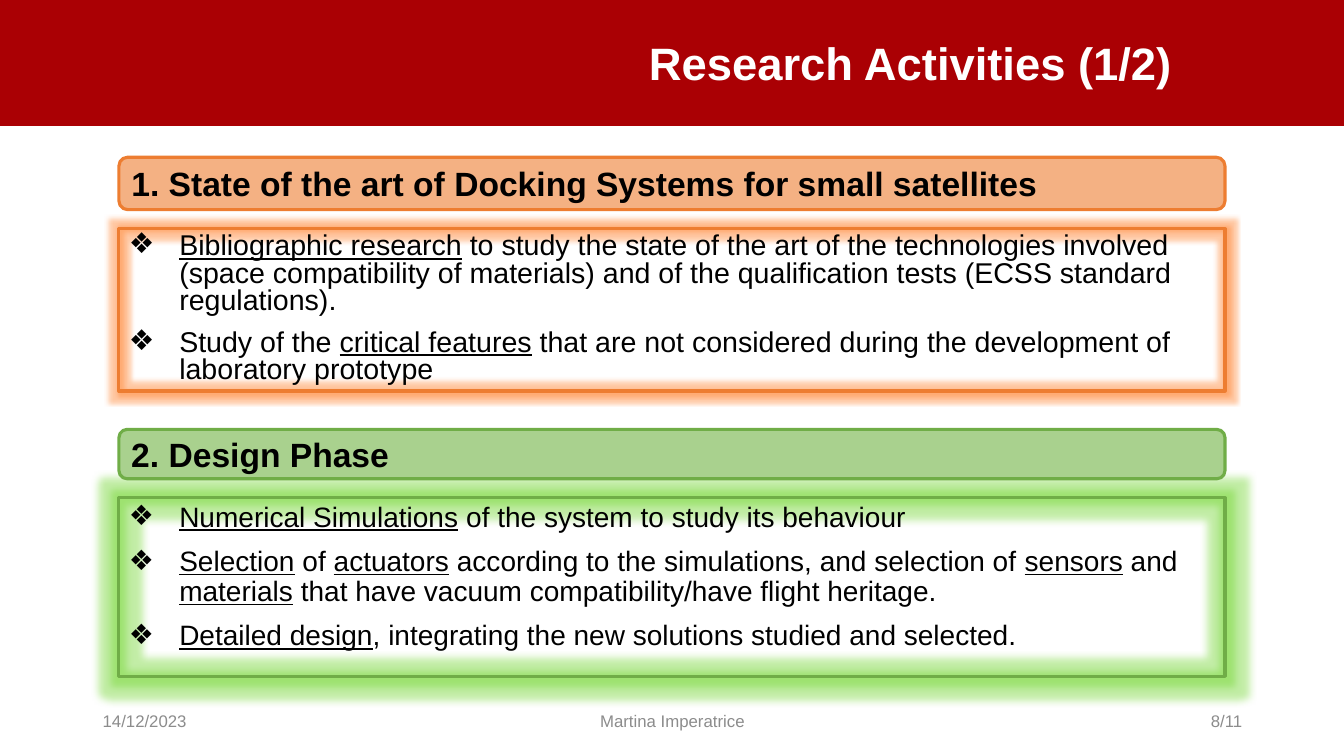
import pptx
import pptx.util
import pptx.dml.color
import pptx.enum.shapes
import pptx.enum.text
import pptx.oxml
import pptx.oxml.ns

Inches = pptx.util.Inches
Pt = pptx.util.Pt
SHAPE = pptx.enum.shapes.MSO_SHAPE
ALIGN = pptx.enum.text.PP_ALIGN
ANCHOR = pptx.enum.text.MSO_ANCHOR

LEFT, WIDTH = 1.18, 10.97
SECTIONS = [
    {
        "heading": "1. State of the art of Docking Systems for small satellites",
        "top": 1.56, "heading_height": 0.52, "body_height": 1.61,
        "fill": "F4B183", "accent": "ED7D31", "glow": 5, "size": 20.4, "spacing": 0.8,
        "bullets": [
            "_Bibliographic research_ to study the state of the art of the technologies involved "
            "(space compatibility of materials) and of the qualification tests "
            "(ECSS standard regulations).",
            "Study of the _critical features_ that are not considered during the development of "
            "laboratory prototype",
        ],
    },
    {
        "heading": "2. Design Phase",
        "top": 4.26, "heading_height": 0.49, "body_height": 1.77,
        "fill": "A9D18E", "accent": "70AD47", "glow": 11, "size": 20, "spacing": 0.9,
        "bullets": [
            "_Numerical Simulations_ of the system to study its behaviour",
            "_Selection_ of _actuators_ according to the simulations, and selection of _sensors_ "
            "and _materials_ that have vacuum compatibility/have flight heritage.",
            "_Detailed design_, integrating the new solutions studied and selected.",
        ],
    },
]
GAP = 0.19


def color(value):
    return pptx.dml.color.RGBColor.from_string(value)


def set_font(para, size, value, bold=False):
    para.font.name = "Arial"
    para.font.size = Pt(size)
    para.font.bold = bold
    para.font.color.rgb = color(value)


def add_box(slide, kind, box, fill=None, line=None):
    shape = slide.shapes.add_shape(kind, *map(Inches, box))
    shape.shadow.inherit = False
    if fill:
        shape.fill.solid()
        shape.fill.fore_color.rgb = color(fill)
    else:
        shape.fill.background()
    if line:
        shape.line.color.rgb = color(line)
        shape.line.width = Pt(2.25)
    else:
        shape.line.fill.background()
    return shape


def write_line(shape, text, size, value, align=ALIGN.LEFT, bold=False):
    frame = shape.text_frame
    frame.word_wrap = True
    frame.vertical_anchor = ANCHOR.MIDDLE
    para = frame.paragraphs[0]
    para.text = text
    para.alignment = align
    set_font(para, size, value, bold)
    return para


def add_glow(shape, value, radius):
    effects = shape._element.spPr.find(pptx.oxml.ns.qn("a:effectLst"))
    effects.append(pptx.oxml.parse_xml(
        f'<a:glow {pptx.oxml.ns.nsdecls("a")} rad="{Pt(radius)}"><a:srgbClr val="{value}">'
        '<a:satMod val="175000"/><a:alpha val="40000"/></a:srgbClr></a:glow>'))


def add_bullet(para):
    properties = para._p.get_or_add_pPr()
    properties.set("marL", str(Inches(0.5)))
    properties.set("indent", str(Inches(-0.5)))
    for tag in ('buFont typeface="Wingdings"', 'buChar char="❖"'):
        if tag.startswith("buFont"):
            tag = 'buFont typeface="Arial"'
        properties.append(pptx.oxml.parse_xml(f'<a:{tag} {pptx.oxml.ns.nsdecls("a")}/>'))


def write_bullets(frame, section):
    frame.word_wrap = True
    frame.vertical_anchor = ANCHOR.TOP
    for index, text in enumerate(section["bullets"]):
        para = frame.add_paragraph() if index else frame.paragraphs[0]
        para.alignment = ALIGN.LEFT
        para.line_spacing = section["spacing"]
        para.space_before = Pt(10 if index else 0)
        add_bullet(para)
        set_font(para, section["size"], "000000")
        for part, words in enumerate(text.split("_")):
            if words:
                span = para.add_run()
                span.text = words
                if part % 2:
                    span.font.underline = True


def add_header(slide, box):
    left, top, width, height = box
    add_box(slide, SHAPE.RECTANGLE, box, "AA0004")
    title = slide.shapes.add_textbox(
        Inches(left + 3.16), Inches(top + 0.37), Inches(8.56), Inches(0.56))
    para = write_line(title, "Research Activities (1/2)", 32.4, "FFFFFF", ALIGN.RIGHT, True)
    para.line_spacing = 0.9


def add_section(slide, section, box):
    left, top, width, height = box
    heading_height = section["heading_height"]
    body_top = top + heading_height + GAP
    body = add_box(slide, SHAPE.RECTANGLE, (left, body_top, width, top + height - body_top),
                   line=section["accent"])
    add_glow(body, section["accent"], section["glow"])
    write_bullets(body.text_frame, section)
    heading = add_box(slide, SHAPE.ROUNDED_RECTANGLE, (left, top, width, heading_height),
                      section["fill"], section["accent"])
    write_line(heading, section["heading"], 24, "000000", bold=True)


def add_footer(slide, box):
    left, top, width, height = box
    items = [("14/12/2023", ALIGN.LEFT), ("Martina Imperatrice", ALIGN.CENTER),
             ("8/11", ALIGN.RIGHT)]
    item_width = 3
    step = (width - item_width) / (len(items) - 1)
    for index, (text, align) in enumerate(items):
        item = slide.shapes.add_textbox(
            Inches(left + index * step), Inches(top), Inches(item_width), Inches(height))
        write_line(item, text, 12, "8C8C8C", align)


def main():
    deck = pptx.Presentation()
    deck.slide_width, deck.slide_height = Inches(13.33), Inches(7.5)
    slide = deck.slides.add_slide(deck.slide_layouts[6])
    add_header(slide, (0, 0, 13.33, 1.25))
    for section in SECTIONS:
        height = section["heading_height"] + GAP + section["body_height"]
        add_section(slide, section, (LEFT, section["top"], WIDTH, height))
    add_footer(slide, (0.92, 6.95, 11.5, 0.4))
    deck.save("out.pptx")


if __name__ == "__main__":
    main()
